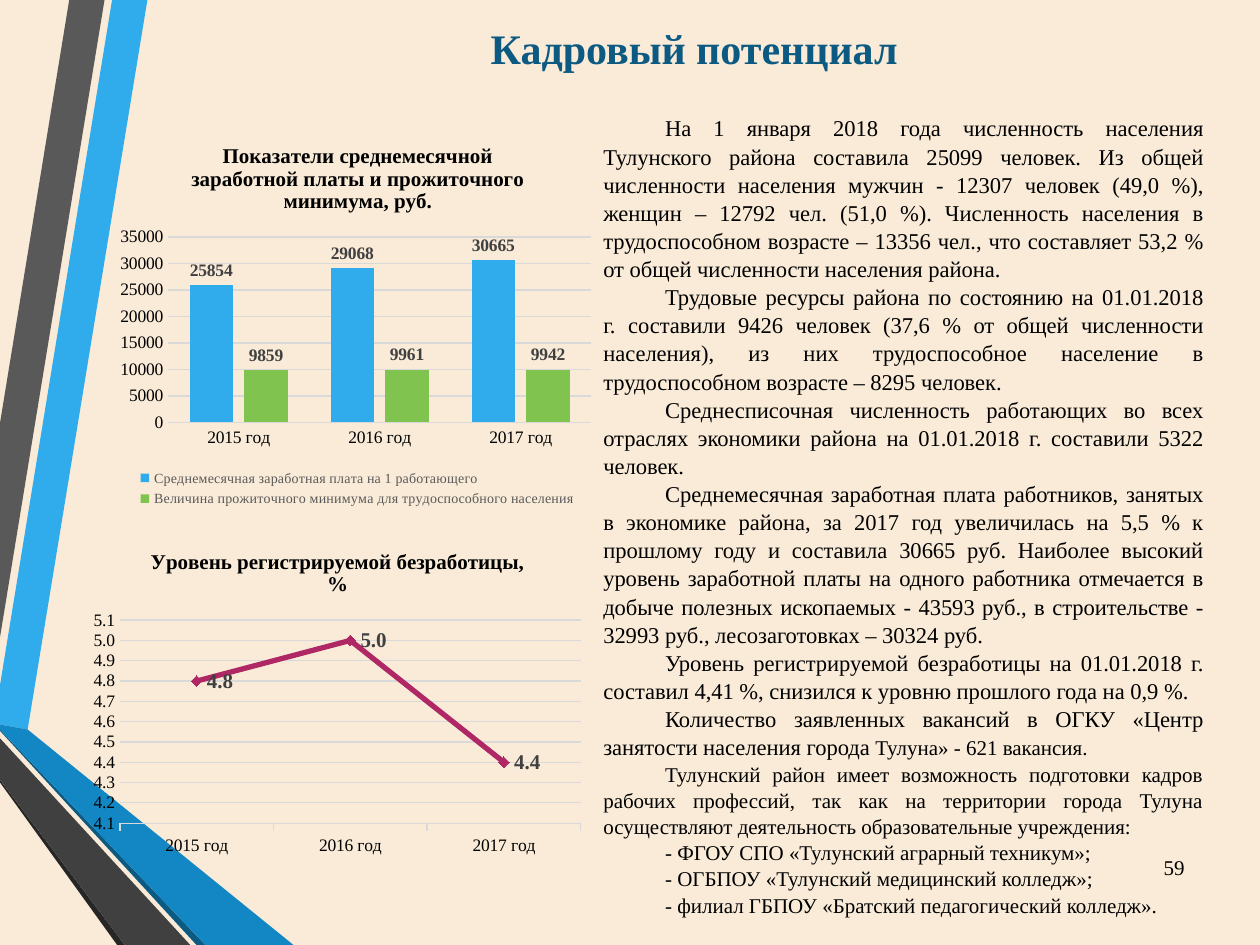
import pptx
import pptx.chart.data
import pptx.dml.color
import pptx.enum.chart
import pptx.enum.text
import pptx.oxml
import pptx.oxml.ns
import pptx.util
from pptx.util import Inches

COLORS = {"paper": "F9EBD8", "sky": "30ACEC", "blue": "1287C3", "navy": "0C5A82",
          "gray": "595959", "dark": "404040", "coal": "262626", "black": "000000",
          "grid": "D9D9D9", "green": "80C34F", "berry": "AF2764", "red": "C00000"}
SERIF = "Times New Roman"
YEARS = ["2015 год", "2016 год", "2017 год"]
CHART = pptx.enum.chart
ALIGN = pptx.enum.text.PP_ALIGN

RIBBONS = [
    ("sky", [(0, 5.44), (0, 5.75), (0.22, 5.79), (1.17, 0), (0.89, 0)]),
    ("gray", [(0.83, 0), (0.55, 0), (0, 3.36), (0, 5.06)]),
    ("coal", [(0, 6.19), (0, 6.21), (0.93, 7.5), (0.99, 7.5)]),
    ("navy", [(0, 5.79), (0, 5.8), (1.56, 7.5), (1.63, 7.5)]),
    ("blue", [(0, 5.79), (1.63, 7.5), (2.33, 7.5), (0.22, 5.79), (0, 5.75)]),
    ("dark", [(0, 6.19), (0.99, 7.5), (1.51, 7.5), (0, 5.86)]),
]

BODY = [
    [("На 1 января 2018 года численность населения Тулунского района составила 25099 человек. "
      "Из общей численности населения мужчин - 12307 человек (49,0 %), женщин – 12792 чел. "
      "(51,0 %). Численность населения в трудоспособном возрасте – 13356 чел., что составляет "
      "53,2 % от общей численности населения района.", 12.9)],
    [("Трудовые ресурсы района по состоянию на 01.01.2018 г. составили 9426 человек (37,6 % от "
      "общей численности населения), из них трудоспособное население в трудоспособном возрасте "
      "– 8295 человек.", 12.9)],
    [("Среднесписочная численность работающих во всех отраслях экономики района на 01.01.2018 г. "
      "составили 5322 человек.", 12.9)],
    [("Среднемесячная заработная плата работников, занятых в экономике района, за 2017 год "
      "увеличилась на 5,5 % к прошлому году и составила 30665 руб. Наиболее высокий уровень "
      "заработной платы на одного работника отмечается в добыче полезных ископаемых - 43593 руб., "
      "в строительстве - 32993 руб., лесозаготовках – 30324 руб.", 12.9)],
    [("Уровень регистрируемой безработицы на 01.01.2018 г. составил 4,41 %, снизился к уровню "
      "прошлого года на 0,9 %.", 12.9)],
    [("Количество заявленных вакансий в ОГКУ «Центр занятости населения города ", 12.9),
     ("Тулуна» - 621 вакансия.", 12)],
    [("Тулунский район имеет возможность подготовки кадров рабочих профессий, так как на "
      "территории города Тулуна осуществляют деятельность образовательные учреждения:", 12)],
    [("- ФГОУ СПО «Тулунский аграрный техникум»;", 12)],
    [("- ОГБПОУ «Тулунский медицинский колледж»;", 12)],
    [("- филиал ГБПОУ «Братский педагогический колледж».", 12)],
]


def rgb(name):
    """Return the named palette colour."""
    return pptx.dml.color.RGBColor.from_string(COLORS[name])


def apply_values(target, **values):
    """Set each given attribute on the target."""
    for name, value in values.items():
        setattr(target, name, value)


def style_font(font, size, color="black", bold=False):
    """Give a font the slide typeface, size, colour and weight."""
    apply_values(font, name=SERIF, size=pptx.util.Pt(size), bold=bold)
    font.color.rgb = rgb(color)


def style_line(line, color, width):
    """Set the colour and the width of a line."""
    line.color.rgb = rgb(color)
    line.width = pptx.util.Pt(width)


def add_ribbons(page, left, top):
    """Draw the folded ribbons from the given corner."""
    for color, points in RIBBONS:
        corners = [(Inches(left + x), Inches(top + y)) for x, y in points]
        builder = page.shapes.build_freeform(*corners[0])
        builder.add_line_segments(corners[1:], close=True)
        ribbon = builder.convert_to_shape()
        ribbon.shadow.inherit = False
        ribbon.fill.solid()
        ribbon.fill.fore_color.rgb = rgb(color)
        ribbon.line.fill.background()


def add_text(page, area, paragraphs, align, color="black", bold=False, indent=0, spacing=1.0):
    """Write paragraphs of sized spans, centred vertically in the area."""
    box = page.shapes.add_textbox(*map(Inches, area))
    frame = box.text_frame
    apply_values(frame, word_wrap=True, vertical_anchor=pptx.enum.text.MSO_ANCHOR.MIDDLE)
    for index, spans in enumerate(paragraphs):
        para = frame.add_paragraph() if index else frame.paragraphs[0]
        apply_values(para, alignment=align, line_spacing=spacing)
        if indent:
            para._p.get_or_add_pPr().set("indent", str(Inches(indent)))
        for text, size in spans:
            span = para.add_run()
            span.text = text
            style_font(span.font, size, color, bold)


def set_plot_area(chart, x, y, w, h):
    """Fix the inner plot area as fractions of the chart."""
    plot_area = chart._chartSpace.chart.plotArea
    for old in plot_area.findall(pptx.oxml.ns.qn("c:layout")):
        plot_area.remove(old)
    values = "".join(f'<c:{tag} val="{value}"/>' for tag, value in
                     [("layoutTarget", "inner"), ("xMode", "edge"), ("yMode", "edge"),
                      ("x", x), ("y", y), ("w", w), ("h", h)])
    plot_area.insert(0, pptx.oxml.parse_xml(
        f'<c:layout {pptx.oxml.ns.nsdecls("c")}><c:manualLayout>{values}'
        '</c:manualLayout></c:layout>'))


def add_chart(page, area, kind, title, rows, scale, plot_area, number_format, label_size):
    """Place a titled yearly chart with labelled values in the area."""
    data = pptx.chart.data.CategoryChartData(number_format=number_format)
    data.categories = YEARS
    for name, values in rows:
        data.add_series(name, values)
    chart = page.shapes.add_chart(kind, *map(Inches, area), data).chart
    apply_values(chart.font, name="Calibri", size=pptx.util.Pt(10))
    chart.font.color.rgb = rgb("black")
    apply_values(chart, has_title=True, has_legend=False)
    chart.chart_title.include_in_layout = False
    para = chart.chart_title.text_frame.paragraphs[0]
    span = para.add_run()
    span.text = title
    style_font(span.font, 12, bold=True)
    low, high, step = scale
    apply_values(chart.value_axis, minimum_scale=low, maximum_scale=high, major_unit=step,
                 has_major_gridlines=True, major_tick_mark=CHART.XL_TICK_MARK.NONE)
    apply_values(chart.value_axis.tick_labels, number_format=number_format,
                 number_format_is_linked=False)
    chart.value_axis.format.line.fill.background()
    style_line(chart.value_axis.major_gridlines.format.line, "grid", 0.75)
    style_line(chart.category_axis.format.line, "grid", 0.75)
    for axis in (chart.category_axis, chart.value_axis):
        style_font(axis.tick_labels.font, 10)
    plot = chart.plots[0]
    apply_values(plot, vary_by_categories=False, has_data_labels=True)
    apply_values(plot.data_labels, show_value=True, number_format=number_format,
                 number_format_is_linked=False)
    style_font(plot.data_labels.font, label_size, "dark", True)
    set_plot_area(chart, *plot_area)
    return chart


def add_wage_chart(page, area):
    """Place the column chart of wages and living minimum."""
    rows = [("Среднемесячная заработная плата на 1 работающего", [25854, 29068, 30665]),
            ("Величина прожиточного минимума для трудоспособного населения", [9859, 9961, 9942])]
    chart = add_chart(page, area, CHART.XL_CHART_TYPE.COLUMN_CLUSTERED,
                      "Показатели среднемесячной заработной платы и прожиточного минимума, руб.",
                      rows, (0, 35000, 5000), (0.11, 0.29, 0.87, 0.48), "General", 10)
    chart.category_axis.major_tick_mark = CHART.XL_TICK_MARK.NONE
    plot = chart.plots[0]
    apply_values(plot, gap_width=100, overlap=-27)
    plot.data_labels.position = CHART.XL_LABEL_POSITION.OUTSIDE_END
    for series, color in zip(plot.series, ("sky", "green")):
        series.format.fill.solid()
        series.format.fill.fore_color.rgb = rgb(color)
    chart.has_legend = True
    apply_values(chart.legend, position=CHART.XL_LEGEND_POSITION.BOTTOM, include_in_layout=False)
    style_font(chart.legend.font, 8, "gray")


def add_unemployment_chart(page, area):
    """Place the line chart of registered unemployment."""
    chart = add_chart(page, area, CHART.XL_CHART_TYPE.LINE_MARKERS_STACKED,
                      "Уровень регистрируемой безработицы, %", [("Series 1", [4.8, 5, 4.4])],
                      (4.1, 5.1, 0.1), (0.07, 0.27, 0.91, 0.62), "0.0", 12)
    chart.category_axis.major_tick_mark = CHART.XL_TICK_MARK.OUTSIDE
    chart.plots[0].data_labels.position = CHART.XL_LABEL_POSITION.RIGHT
    series = chart.plots[0].series[0]
    series.smooth = False
    style_line(series.format.line, "berry", 3)
    apply_values(series.marker, style=CHART.XL_MARKER_STYLE.DIAMOND, size=6)
    series.marker.format.fill.solid()
    series.marker.format.fill.fore_color.rgb = rgb("red")
    series.marker.format.line.color.rgb = rgb("berry")


def main():
    """Build and save the staff potential slide."""
    deck = pptx.Presentation()
    apply_values(deck, slide_width=Inches(10), slide_height=Inches(7.5))
    page = deck.slides.add_slide(deck.slide_layouts[6])
    page.background.fill.solid()
    page.background.fill.fore_color.rgb = rgb("paper")
    add_ribbons(page, 0, 0)
    add_text(page, (1.06, 0, 8.9, 0.76), [[("Кадровый потенциал", 24)]], ALIGN.CENTER, "navy", True)
    add_text(page, (4.69, 0.68, 4.96, 6.82), BODY, ALIGN.JUSTIFY, indent=0.49, spacing=1.04)
    add_text(page, (9.03, 6.68, 0.47, 0.4), [[("59", 12)]], ALIGN.RIGHT)
    add_wage_chart(page, (0.91, 0.99, 3.86, 3.07))
    add_unemployment_chart(page, (0.67, 4.22, 4.02, 2.6))
    deck.save("out.pptx")


if __name__ == "__main__":
    main()
